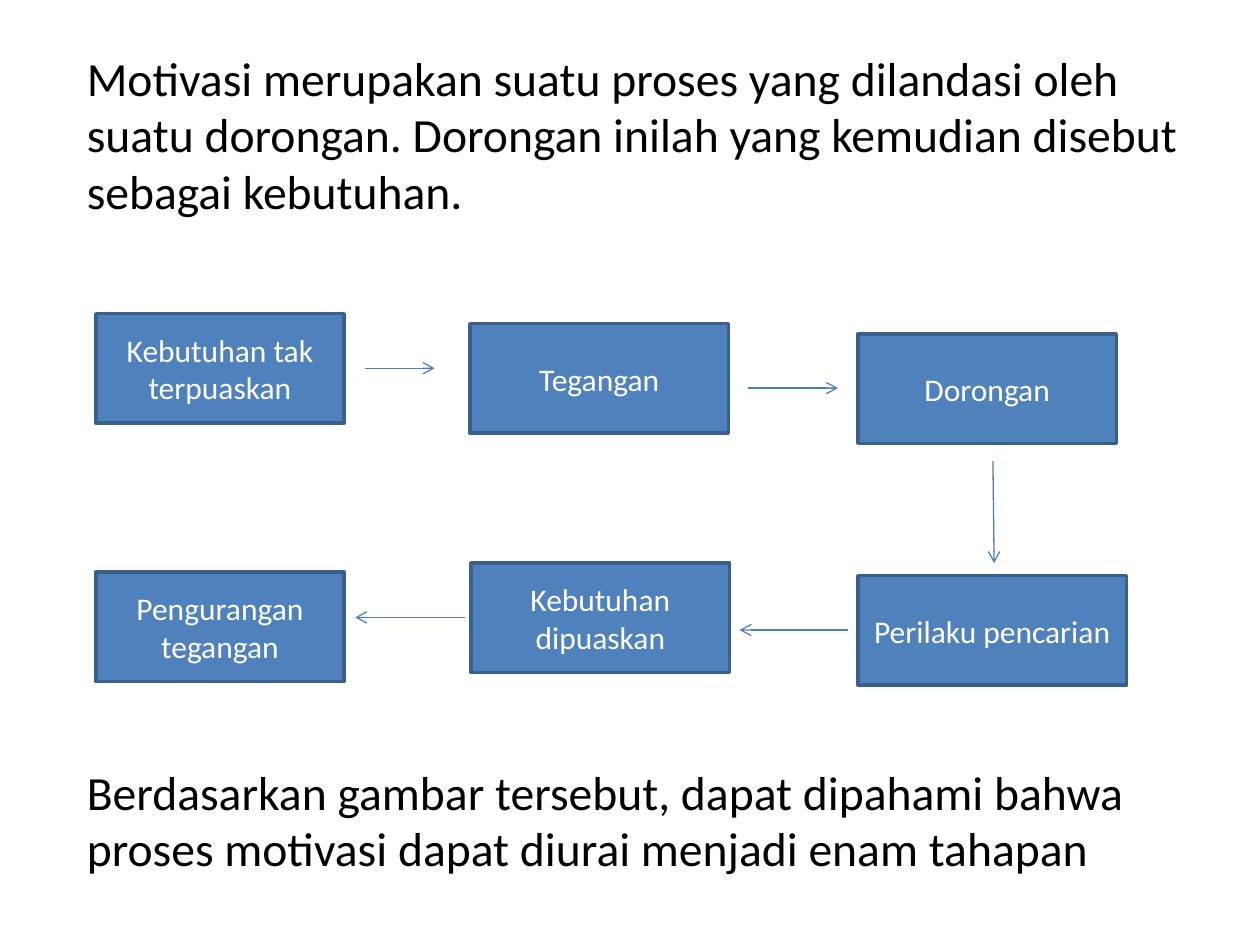
from lxml.etree import SubElement
from pptx import Presentation
from pptx.dml.color import RGBColor
from pptx.enum.shapes import MSO_CONNECTOR, MSO_SHAPE
from pptx.enum.text import MSO_ANCHOR, PP_ALIGN
from pptx.oxml.ns import qn
from pptx.util import Pt

FONT = "Calibri"
COLORS = {
    "text": "000000",
    "box": "4F81BD",
    "border": "3A5F8C",
    "box_text": "FFFFFF",
    "arrow": "4B7EBC",
}
BOX_HEIGHT = 62.6

# Stage label, left, top, width
STAGES = [
    ("Kebutuhan tak terpuaskan", 54.7, 179.3, 142),
    ("Tegangan", 268.6, 185, 147.6),
    ("Dorongan", 490.3, 190.8, 147.6),
    ("Perilaku pencarian", 490.3, 329, 153.4),
    ("Kebutuhan dipuaskan", 269.3, 321.8, 147.6),
    ("Pengurangan tegangan", 54.7, 326.9, 142),
]

# Start x, start y, end x, end y
ARROWS = [
    (208.8, 210.4, 248.4, 210.4),
    (427.7, 221.8, 478.8, 221.8),
    (567.4, 263.5, 568.1, 321.8),
    (484.6, 360, 422.6, 360),
    (265.7, 352.8, 203, 352.8),
]


def color(name):
    return RGBColor.from_string(COLORS[name])


def add_run(paragraph, text, size, color_name):
    run = paragraph.add_run()
    run.text = text
    run.font.name = FONT
    run.font.size = Pt(size)
    run.font.color.rgb = color(color_name)


def add_body_text(slide, text, top, height):
    shape = slide.shapes.add_textbox(Pt(42.5), Pt(top), Pt(652), Pt(height))
    shape.text_frame.word_wrap = True
    paragraph = shape.text_frame.paragraphs[0]
    paragraph.line_spacing = Pt(32.5)
    add_run(paragraph, text, 27.2, "text")


def add_stage(slide, label, left, top, width):
    shape = slide.shapes.add_shape(
        MSO_SHAPE.RECTANGLE, Pt(left), Pt(top), Pt(width), Pt(BOX_HEIGHT))
    shape.shadow.inherit = False
    shape.fill.solid()
    shape.fill.fore_color.rgb = color("box")
    shape.line.color.rgb = color("border")
    shape.line.width = Pt(2)
    frame = shape.text_frame
    frame.word_wrap = True
    frame.vertical_anchor = MSO_ANCHOR.MIDDLE
    paragraph = frame.paragraphs[0]
    paragraph.alignment = PP_ALIGN.CENTER
    add_run(paragraph, label, 18, "box_text")


def add_arrow(slide, *ends):
    connector = slide.shapes.add_connector(
        MSO_CONNECTOR.STRAIGHT, *[Pt(value) for value in ends])
    connector.line.color.rgb = color("arrow")
    connector.line.width = Pt(0.75)
    properties = connector._element.spPr
    SubElement(properties.find(qn("a:ln")), qn("a:tailEnd"), type="arrow")
    SubElement(properties, qn("a:effectLst"))


def main():
    presentation = Presentation()
    presentation.slide_width, presentation.slide_height = Pt(720), Pt(540)
    slide = presentation.slides.add_slide(presentation.slide_layouts[6])

    # Introduction and conclusion
    add_body_text(
        slide,
        "Motivasi merupakan suatu proses yang dilandasi oleh suatu dorongan. "
        "Dorongan inilah yang kemudian disebut sebagai kebutuhan.",
        24.3, 105)
    add_body_text(
        slide,
        "Berdasarkan gambar tersebut, dapat dipahami bahwa proses motivasi "
        "dapat diurai menjadi enam tahapan",
        432.3, 72)

    # Motivation process
    for stage in STAGES:
        add_stage(slide, *stage)
    for arrow in ARROWS:
        add_arrow(slide, *arrow)

    presentation.save("out.pptx")


if __name__ == "__main__":
    main()
